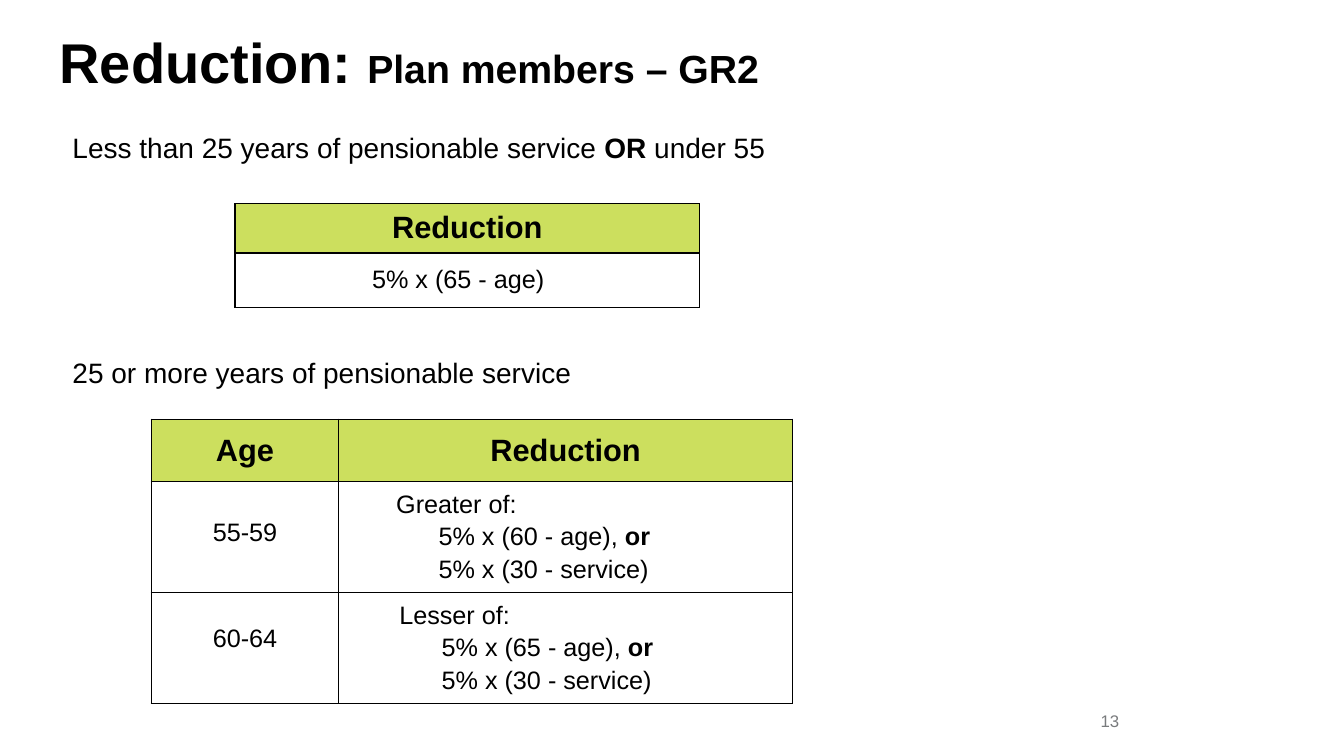
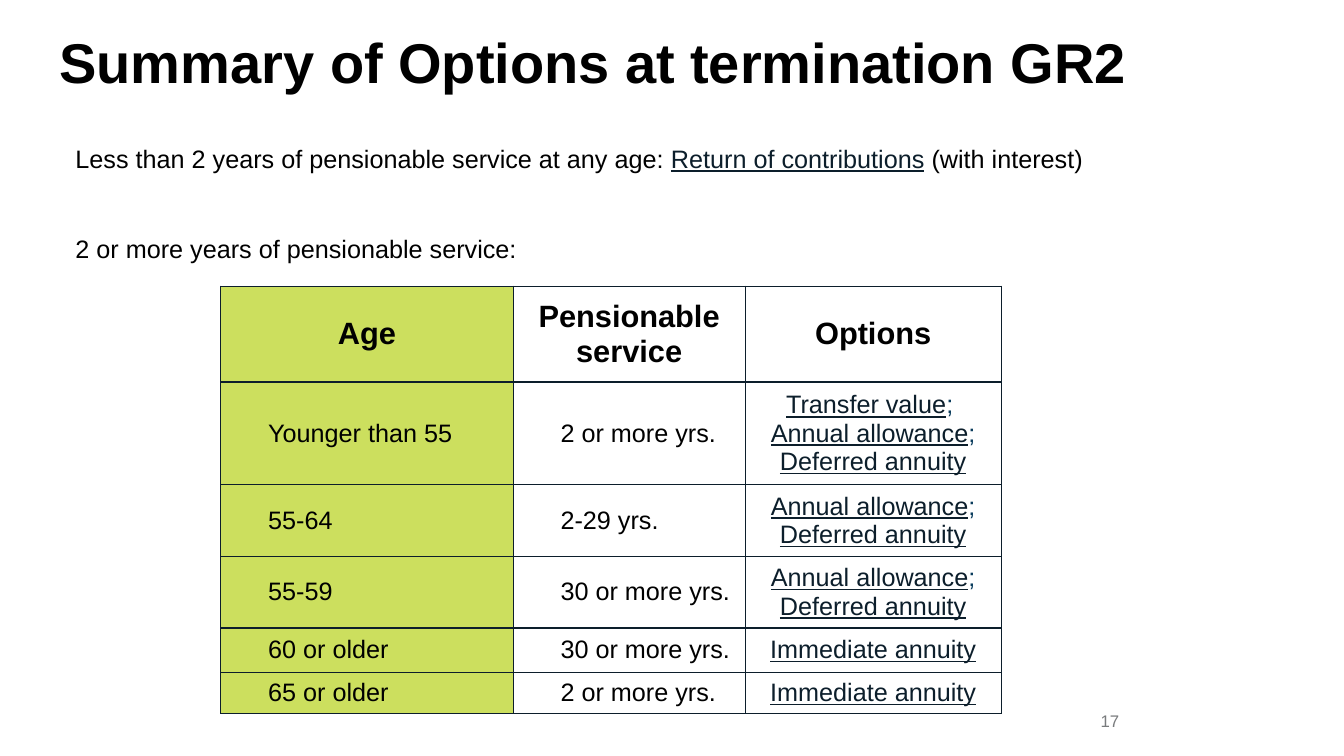
import dataclasses

import lxml.etree
import pptx
import pptx.dml.color
import pptx.enum.text
import pptx.oxml.ns
import pptx.util

Inches = pptx.util.Inches
ALIGN = pptx.enum.text.PP_ALIGN
ANCHOR = pptx.enum.text.MSO_ANCHOR

BLACK, WHITE, LIME = "000000", "FFFFFF", "CCDF5E"
NAVY, BLUE, GRAY = "0C1E2B", "093B5C", "797B7D"
BOLD = {"bold": True}
OPTION = {"color": NAVY, "underline": True}
SEPARATOR = ("; ", {"color": BLUE})


def rgb(hex_string):
    return pptx.dml.color.RGBColor.from_string(hex_string)


def set_formats(target, formats):
    for name, value in formats.items():
        setattr(target, name, value)


@dataclasses.dataclass
class Cell:
    paragraphs: list
    fill: str = WHITE
    size: int = 18
    bold: bool = False
    alignment: int = ALIGN.LEFT
    indents: tuple = ()
    gap: float = 0
    frame: dict = dataclasses.field(default_factory=dict)


def header(text, fill=LIME):
    return Cell([[text]], fill, 22, True, ALIGN.CENTER)


class Deck:
    font = "Arial"

    def __init__(self):
        self.presentation = pptx.Presentation()
        self.presentation.slide_width = Inches(13.33)
        self.presentation.slide_height = Inches(7.5)
        self.slide = None

    def add_paragraphs(self, text_frame, paragraphs, size, color=BLACK, bold=False,
                       indents=(), gap=0, **paragraph_formats):
        text_frame.word_wrap = True
        for index, runs in enumerate(paragraphs):
            paragraph = text_frame.paragraphs[0] if index == 0 else text_frame.add_paragraph()
            set_formats(paragraph, paragraph_formats)
            if index and gap:
                paragraph.space_before = pptx.util.Pt(gap)
            if indents:
                properties = paragraph._p.get_or_add_pPr()
                properties.set("marL", str(Inches(indents[index])))
            for item in runs:
                text, changes = (item, {}) if isinstance(item, str) else item
                formats = {"name": self.font, "size": size, "bold": bold,
                           "color": color, **changes}
                run = paragraph.add_run()
                run.text = text
                run.font.color.rgb = rgb(formats.pop("color"))
                formats["size"] = pptx.util.Pt(formats["size"])
                set_formats(run.font, formats)

    def add_slide(self, title, number):
        self.slide = self.presentation.slides.add_slide(self.presentation.slide_layouts[5])
        shape = self.slide.shapes.title
        set_formats(shape, {"left": Inches(0.59), "top": Inches(0.35),
                            "width": Inches(10.8), "height": Inches(0.82)})
        set_formats(shape.text_frame, {
            "margin_left": 0, "margin_top": 0, "margin_right": 0, "margin_bottom": 0,
            "vertical_anchor": ANCHOR.TOP,
            "auto_size": pptx.enum.text.MSO_AUTO_SIZE.NONE})
        self.add_paragraphs(shape.text_frame, [title], 40, bold=True,
                            alignment=ALIGN.LEFT, line_spacing=0.9)
        self.add_text([str(number)], (9.63, 6.95, 1.57, 0.4), 12, GRAY,
                      ANCHOR.MIDDLE, ALIGN.RIGHT)

    def add_text(self, runs, place, size, color=BLACK, anchor=ANCHOR.TOP,
                 alignment=ALIGN.LEFT):
        shape = self.slide.shapes.add_textbox(*map(Inches, place))
        shape.text_frame.vertical_anchor = anchor
        self.add_paragraphs(shape.text_frame, [runs], size, color, alignment=alignment)

    def add_borders(self, cell, color):
        properties = cell._tc.get_or_add_tcPr()
        for side in ("a:lnL", "a:lnR", "a:lnT", "a:lnB"):
            line = lxml.etree.SubElement(properties, pptx.oxml.ns.qn(side),
                                         w=str(pptx.util.Pt(1)))
            fill = lxml.etree.SubElement(line, pptx.oxml.ns.qn("a:solidFill"))
            lxml.etree.SubElement(fill, pptx.oxml.ns.qn("a:srgbClr"), val=color)

    def add_table(self, left, top, widths, heights, rows, border):
        place = map(Inches, (left, top, sum(widths), sum(heights)))
        table = self.slide.shapes.add_table(len(heights), len(widths), *place).table
        set_formats(table, {"first_row": False, "horz_banding": False})
        for column, width in zip(table.columns, widths):
            column.width = Inches(width)
        for row, height, contents in zip(table.rows, heights, rows):
            row.height = Inches(height)
            for cell, content in zip(row.cells, contents):
                self.add_borders(cell, border)
                cell.fill.solid()
                cell.fill.fore_color.rgb = rgb(content.fill)
                set_formats(cell, {"vertical_anchor": ANCHOR.MIDDLE, **content.frame})
                self.add_paragraphs(cell.text_frame, content.paragraphs, content.size,
                                    bold=content.bold, indents=content.indents,
                                    gap=content.gap, alignment=content.alignment)


def age_cell(text, top):
    return Cell([[text]], alignment=ALIGN.CENTER,
                frame={"vertical_anchor": ANCHOR.TOP, "margin_top": Inches(top)})


def formula_cell(heading, age, indent):
    paragraphs = [[heading], [f"5% x ({age} - age), ", ("or", BOLD)],
                  ["5% x (30 - service)"]]
    return Cell(paragraphs, indents=(indent, indent + 0.42, indent + 0.42), gap=3)


def build_reduction(deck):
    deck.add_slide(["Reduction: ", ("Plan members – GR2", {"size": 28})], 13)
    deck.add_text(["Less than 25 years of pensionable service ", ("OR", BOLD),
                   " under 55"], (0.62, 1.25, 7.39, 0.44), 20)
    deck.add_table(2.33, 2.02, [4.61], [0.49, 0.54],
                   [[header("Reduction")],
                    [Cell([["5% x (65 - age)"]], indents=(1.26,))]], BLACK)
    deck.add_text(["25 or more years of pensionable service"], (0.62, 3.48, 7.39, 0.44), 20)
    deck.add_table(1.5, 4.16, [1.86, 4.5], [0.62, 1.1, 1.1],
                   [[header("Age"), header("Reduction")],
                    [age_cell("55-59", 0.37), formula_cell("Greater of:", 60, 0.47)],
                    [age_cell("60-64", 0.32), formula_cell("Lesser of:", 65, 0.5)]], BLACK)


def build_options(deck):
    deck.add_slide(["Summary of Options at termination GR2"], 17)
    deck.add_text(["Less than 2 years of pensionable service at any age: ",
                   ("Return of contributions", OPTION), " (with interest)"],
                  (0.65, 1.37, 10.69, 0.4), 18)
    deck.add_text(["2 or more years of pensionable service:"], (0.65, 2.27, 9.97, 0.4), 18)

    transfer = [("Transfer value", OPTION), SEPARATOR]
    allowance = [("Annual allowance", OPTION), SEPARATOR, ("Deferred annuity", OPTION)]
    immediate = [("Immediate annuity", OPTION)]
    entries = [
        ("Younger than 55", "2 or more yrs.", [transfer, allowance]),
        ("55-64", "2-29 yrs.", [allowance]),
        ("55-59", "30 or more yrs.", [allowance]),
        ("60 or older", "30 or more yrs.", [immediate]),
        ("65 or older", "2 or more yrs.", [immediate]),
    ]
    inset = {"margin_left": Inches(0.47)}
    rows = [[header("Age"), header("Pensionable service", WHITE), header("Options", WHITE)]]
    for age, service, options in entries:
        rows.append([Cell([[age]], LIME, frame=inset), Cell([[service]], frame=inset),
                     Cell(options, alignment=ALIGN.CENTER)])
    deck.add_table(2.19, 2.84, [2.9, 2.3, 2.54], [0.95, 1.02, 0.71, 0.71, 0.44, 0.41],
                   rows, NAVY)


def main():
    deck = Deck()
    build_reduction(deck)
    build_options(deck)
    deck.presentation.save("out.pptx")


if __name__ == "__main__":
    main()
